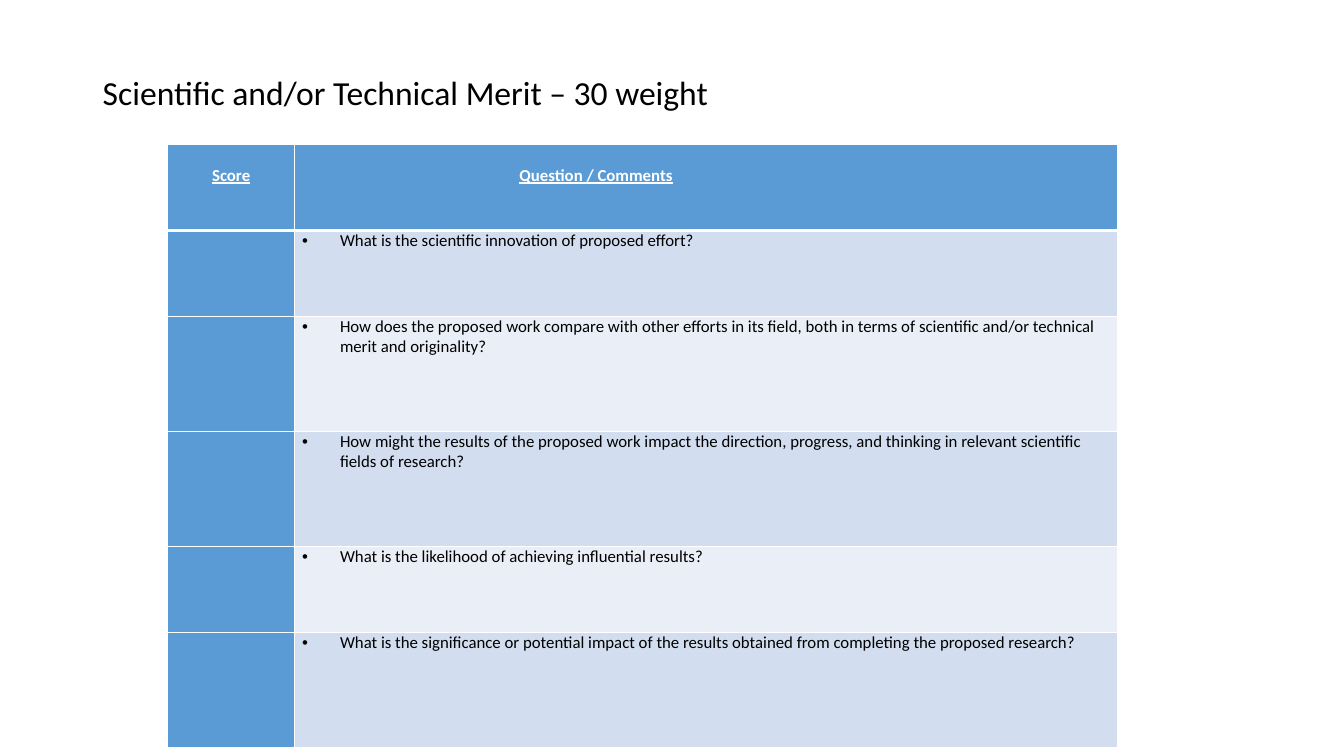
from lxml.etree import SubElement
from pptx import Presentation
from pptx.dml.color import RGBColor
from pptx.enum.text import MSO_ANCHOR, PP_ALIGN
from pptx.oxml.ns import qn
from pptx.util import Pt

FONT = "Calibri"
BLACK, WHITE, BLUE = "000000", "FFFFFF", "5B9BD5"
BANDS = ("D2DEEF", "EAEFF7")
SHORT_ROW, TALL_ROW = 61.3, 82.2
COLUMN_WIDTHS = (90.7, 587.5)
QUESTIONS = [
    ("What is the scientific innovation of proposed effort?", SHORT_ROW),
    ("How does the proposed work compare with other efforts in its field, both in terms of "
     "scientific and/or technical merit and originality?", TALL_ROW),
    ("How might the results of the proposed work impact the direction, progress, and thinking "
     "in relevant scientific fields of research?", TALL_ROW),
    ("What is the likelihood of achieving influential results?", SHORT_ROW),
    ("What is the significance or potential impact of the results obtained from completing "
     "the proposed research?", TALL_ROW),
]


def color(hex_value):
    return RGBColor.from_string(hex_value)


def add_run(paragraph, text, size, hex_value, bold=False, underline=False):
    run = paragraph.add_run()
    run.text = text
    font = run.font
    font.name, font.size = FONT, Pt(size)
    font.bold, font.underline = bold, underline
    font.color.rgb = color(hex_value)


def add_title(slide, text):
    title = slide.shapes.title
    title.left, title.top, title.width, title.height = Pt(66.2), Pt(28.8), Pt(828), Pt(103.7)
    frame = title.text_frame
    frame.word_wrap = True
    frame.vertical_anchor = MSO_ANCHOR.MIDDLE
    frame.margin_bottom = Pt(30)
    paragraph = frame.paragraphs[0]
    paragraph.alignment = PP_ALIGN.LEFT
    paragraph.line_spacing = 0.9
    add_run(paragraph, text, 24, BLACK)


def style_cell(cell, fill, top_width=1, bottom_width=1):
    """Give the cell white borders and a solid fill."""
    properties = cell._tc.get_or_add_tcPr()
    for side, width in (("L", 1), ("R", 1), ("T", top_width), ("B", bottom_width)):
        line = SubElement(properties, qn(f"a:ln{side}"), w=str(Pt(width)))
        SubElement(SubElement(line, qn("a:solidFill")), qn("a:srgbClr"), val=WHITE)
    cell.fill.solid()
    cell.fill.fore_color.rgb = color(fill)


def set_margins(cell, left=5.4, top=0):
    cell.margin_left, cell.margin_right = Pt(left), Pt(5.4)
    cell.margin_top, cell.margin_bottom = Pt(top), Pt(0)


def fill_heading(cell, text, alignment, left=5.4):
    style_cell(cell, BLUE, bottom_width=3)
    set_margins(cell, left, top=14.6)
    paragraph = cell.text_frame.paragraphs[0]
    paragraph.alignment = alignment
    add_run(paragraph, text, 12, WHITE, bold=True, underline=True)


def fill_question(cell, text, band, top_width):
    style_cell(cell, band, top_width)
    set_margins(cell)
    paragraph = cell.text_frame.paragraphs[0]
    properties = paragraph._p.get_or_add_pPr()
    properties.set("marL", str(Pt(27)))
    properties.set("indent", str(Pt(-27)))
    SubElement(properties, qn("a:buFont"), typeface="Arial")
    SubElement(properties, qn("a:buChar"), char="•")
    add_run(paragraph, text, 12, BLACK)


def add_score_table(slide):
    heights = [SHORT_ROW] + [height for _, height in QUESTIONS]
    table = slide.shapes.add_table(
        len(heights), len(COLUMN_WIDTHS), Pt(119.8), Pt(103.3),
        Pt(sum(COLUMN_WIDTHS)), Pt(sum(heights))).table
    table.first_col = True
    for column, width in zip(table.columns, COLUMN_WIDTHS):
        column.width = Pt(width)
    for row, height in zip(table.rows, heights):
        row.height = Pt(height)

    fill_heading(table.cell(0, 0), "Score", PP_ALIGN.CENTER)
    fill_heading(table.cell(0, 1), "Question / Comments", PP_ALIGN.LEFT, left=160.6)
    for number, (question, _) in enumerate(QUESTIONS, start=1):
        top_width = 3 if number == 1 else 1
        style_cell(table.cell(number, 0), BLUE, top_width)
        fill_question(table.cell(number, 1), question, BANDS[(number - 1) % 2], top_width)


def main():
    presentation = Presentation()
    presentation.slide_width, presentation.slide_height = Pt(960), Pt(540)
    slide = presentation.slides.add_slide(presentation.slide_layouts[5])
    add_title(slide, "Scientific and/or Technical Merit – 30 weight")
    add_score_table(slide)
    presentation.save("out.pptx")


if __name__ == "__main__":
    main()
